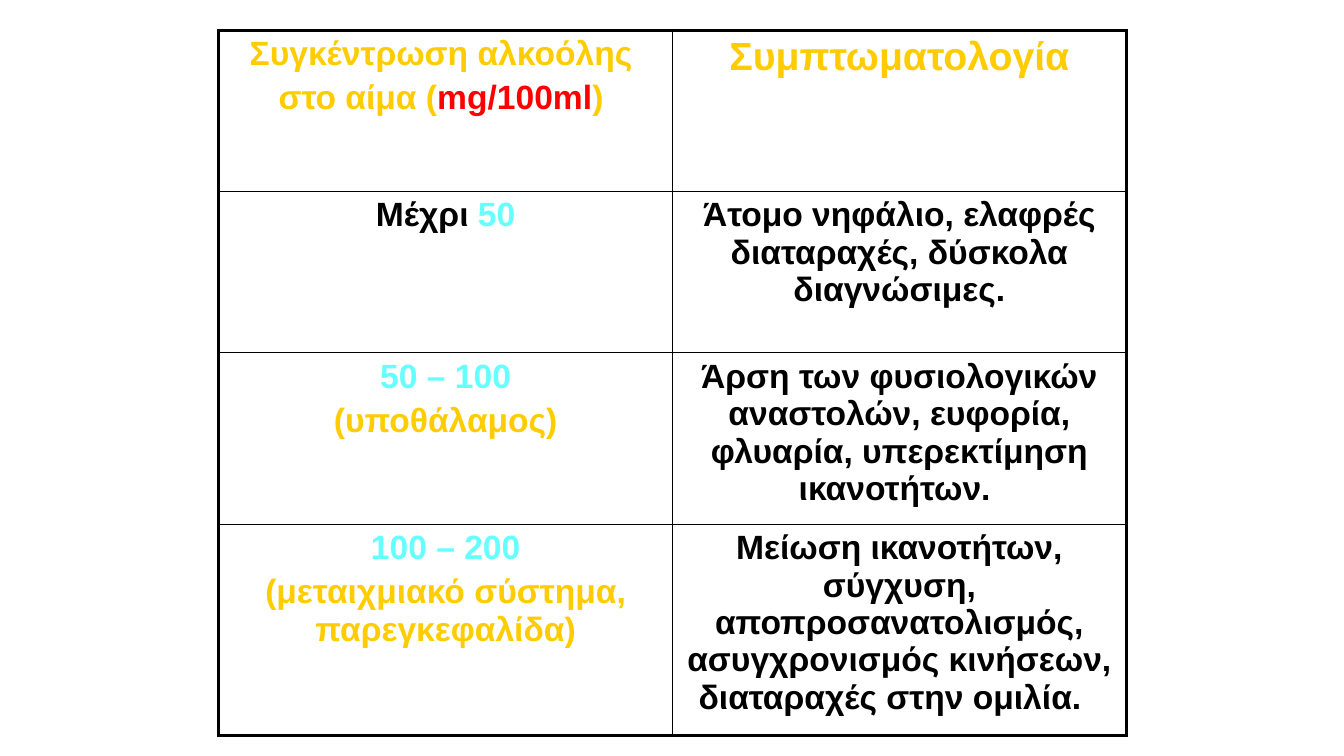
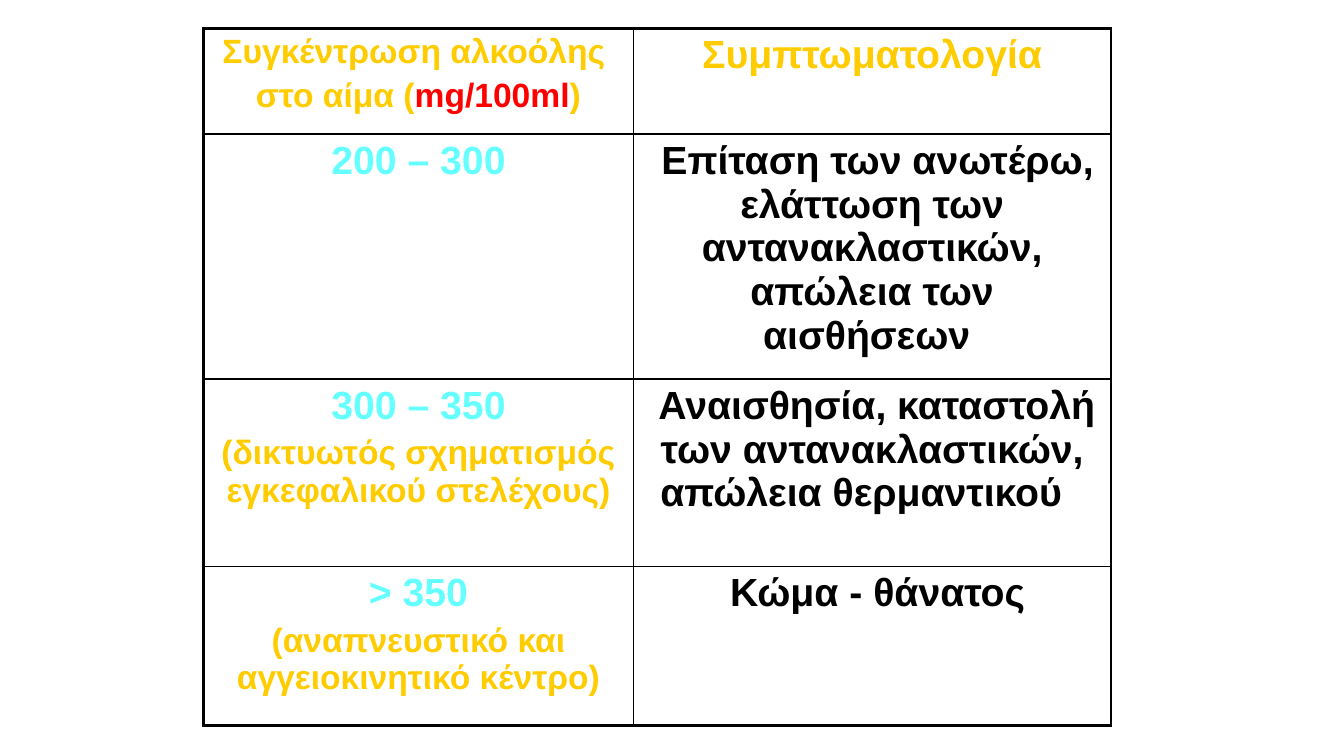
from dataclasses import dataclass

from lxml.etree import SubElement
from pptx import Presentation
from pptx.dml.color import RGBColor
from pptx.enum.text import PP_ALIGN
from pptx.oxml.ns import qn
from pptx.util import Inches, Pt


@dataclass(frozen=True)
class Theme:
    font: str = "Arial"
    gold: str = "FFCC00"
    red: str = "FF0000"
    cyan: str = "66FFFF"
    black: str = "000000"
    normal: int = 24
    large: int = 28
    outer_line: float = 2.25
    inner_line: float = 1
    space_before: int = 20  # percent of the line


THEME = Theme()


@dataclass(frozen=True)
class Span:
    text: str
    color: str
    size: int = THEME.normal


def header_row(closing=")"):
    """A row is a list of cells, a cell a list of paragraphs, a paragraph a list of spans."""
    concentration = [
        [Span("Συγκέντρωση αλκοόλης ", THEME.gold)],
        [Span("στο αίμα (", THEME.gold), Span("mg/100ml", THEME.red), Span(closing, THEME.gold)],
    ]
    return [concentration, [[Span("Συμπτωματολογία", THEME.gold, THEME.large)]]]


def level_row(level, symptoms, area="", prefix="", size=THEME.normal):
    """Alcohol level, with the affected brain area below it, and the symptoms."""
    first = [Span(level, THEME.cyan, size)]
    if prefix:
        first.insert(0, Span(prefix, THEME.black, size))
    paragraphs = [first]
    if area:
        paragraphs.append([Span(area, THEME.gold)])
    return [paragraphs, [[Span(symptoms, THEME.black, size)]]]


def write_paragraph(para, spans):
    para.alignment = PP_ALIGN.CENTER
    spacing = SubElement(para._p.get_or_add_pPr(), qn("a:spcBef"))
    SubElement(spacing, qn("a:spcPct"), val=str(THEME.space_before * 1000))
    for span in spans:
        run = para.add_run()
        run.text = span.text
        run.font.name = THEME.font
        run.font.size = Pt(span.size)
        run.font.bold = True
        run.font.color.rgb = RGBColor.from_string(span.color)


def write_cell(cell, paragraphs):
    frame = cell.text_frame
    for index, spans in enumerate(paragraphs):
        write_paragraph(frame.add_paragraph() if index else frame.paragraphs[0], spans)


def draw_borders(cell, outer_edges):
    """Rule all four edges, heavier where the edge lies on the table's outline."""
    properties = cell._tc.get_or_add_tcPr()
    for edge, is_outer in outer_edges.items():
        width = Pt(THEME.outer_line if is_outer else THEME.inner_line)
        line = SubElement(properties, qn(f"a:ln{edge}"), w=str(width))
        fill = SubElement(line, qn("a:solidFill"))
        SubElement(fill, qn("a:srgbClr"), val=THEME.black)


def add_symptom_table(page, left, top, widths, heights, rows):
    frame = page.shapes.add_table(
        len(heights), len(widths), Inches(left), Inches(top),
        Inches(sum(widths)), Inches(sum(heights)))
    table = frame.table
    table.first_row = table.horz_banding = False
    for column, width in zip(table.columns, widths):
        column.width = Inches(width)
    for row, height in zip(table.rows, heights):
        row.height = Inches(height)

    last_row, last_column = len(heights) - 1, len(widths) - 1
    for r, contents in enumerate(rows):
        for c, paragraphs in enumerate(contents):
            cell = table.cell(r, c)
            draw_borders(cell, {"L": c == 0, "R": c == last_column,
                                "T": r == 0, "B": r == last_row})
            cell.fill.background()
            write_cell(cell, paragraphs)


def main():
    deck = Presentation()
    deck.slide_width, deck.slide_height = Inches(13.33), Inches(7.5)
    blank = deck.slide_layouts[6]

    add_symptom_table(
        deck.slides.add_slide(blank), 2.17, 0.3, [4.5, 4.5], [1.6, 1.6, 1.7, 2.1],
        [
            header_row(closing=") "),
            level_row("50", "Άτομο νηφάλιο, ελαφρές διαταραχές, δύσκολα διαγνώσιμες.",
                      prefix="Μέχρι "),
            level_row("50 – 100",
                      "Άρση των φυσιολογικών αναστολών, ευφορία, φλυαρία, "
                      "υπερεκτίμηση ικανοτήτων. ",
                      "(υποθάλαμος)"),
            level_row("100 – 200",
                      "Μείωση ικανοτήτων, σύγχυση, αποπροσανατολισμός, "
                      "ασυγχρονισμός κινήσεων, διαταραχές στην ομιλία.  ",
                      "(μεταιχμιακό σύστημα, παρεγκεφαλίδα)"),
        ])

    add_symptom_table(
        deck.slides.add_slide(blank), 2.02, 0.28, [4.26, 4.74], [1.05, 2.43, 1.86, 1.58],
        [
            header_row(),
            level_row("200 – 300",
                      " Επίταση των ανωτέρω, ελάττωση των αντανακλαστικών, "
                      "απώλεια των αισθήσεων ",
                      size=THEME.large),
            level_row("300 – 350",
                      " Αναισθησία, καταστολή των αντανακλαστικών, "
                      "απώλεια θερμαντικού  ",
                      "(δικτυωτός σχηματισμός εγκεφαλικού στελέχους)",
                      size=THEME.large),
            level_row("> 350", " Κώμα - θάνατος",
                      "(αναπνευστικό και αγγειοκινητικό κέντρο)",
                      size=THEME.large),
        ])

    deck.save("out.pptx")


if __name__ == "__main__":
    main()
